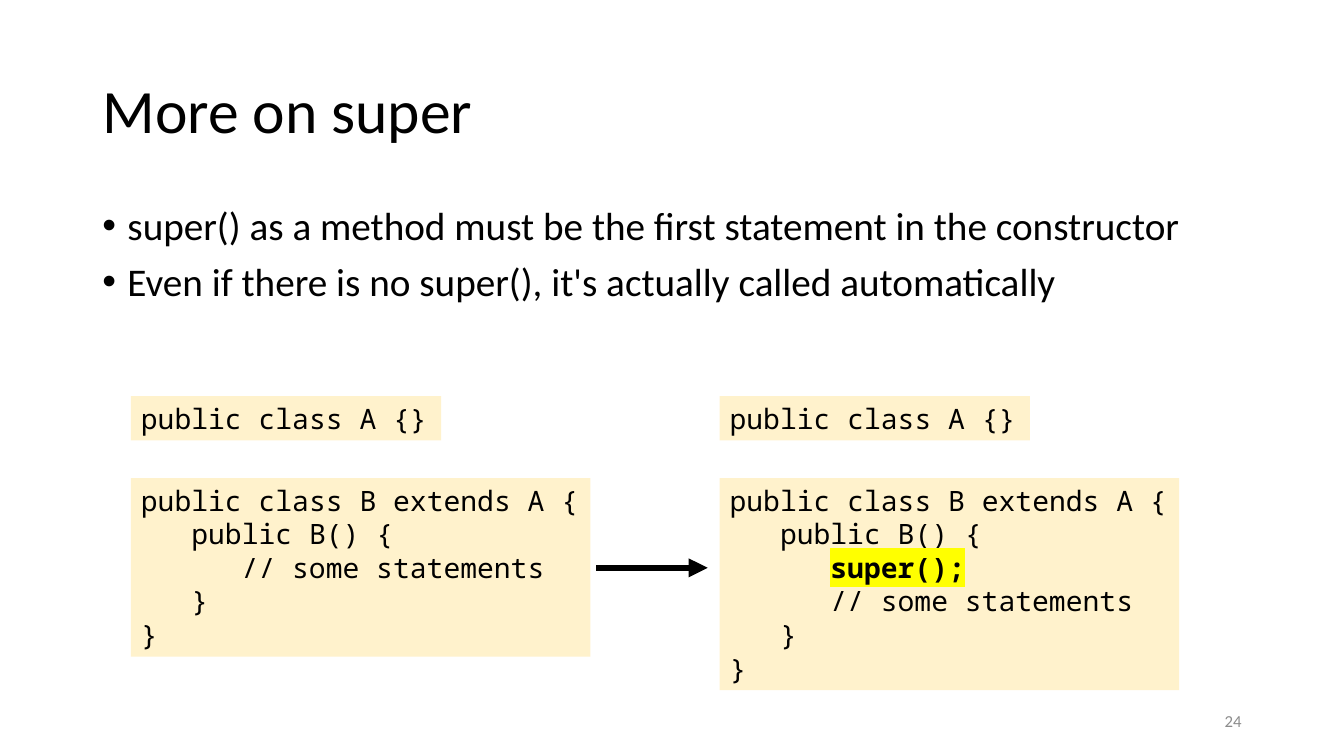
import pptx
import pptx.util
import pptx.oxml
import pptx.dml.color
import pptx.enum.shapes
import pptx.enum.text
import pptx.oxml.ns

Pt = pptx.util.Pt
ALIGN = pptx.enum.text.PP_ALIGN
ANCHOR = pptx.enum.text.MSO_ANCHOR

# Content: a code line is (indent level, text, highlighted)
TITLE = "More on super"
BULLETS = [
    "super() as a method must be the first statement in the constructor",
    "Even if there is no super(), it's actually called automatically",
]
PAGE = "24"
CLASS_A = [(0, "public class A {}", False)]
OPENING = [(0, "public class B extends A {", False), (1, "public B() {", False)]
CLOSING = [(2, "// some statements", False), (1, "}", False), (0, "}", False)]
CALL = [(2, "super();", True)]
COLUMNS = [
    (93.6, OPENING + CLOSING),
    (514.1, OPENING + CALL + CLOSING),
]
COLORS = {"text": "000000", "page": "8C8C8C", "code": "FFF2CC", "mark": "FFFF00"}
SANS, MONO = "Calibri", "Noto Sans Mono"
CODE_LINE, CODE_INDENT, CODE_PAD = 24, 36, 7.6


def rgb(name):
    return pptx.dml.color.RGBColor.from_string(COLORS[name])


def xml(tag, **attrs):
    el = pptx.oxml.parse_xml(f"<a:{tag} {pptx.oxml.ns.nsdecls('a')}/>")
    for key, value in attrs.items():
        el.set(key, str(value))
    return el


def write(p, text, size, font=SANS, color="text", align=ALIGN.LEFT,
          spacing=1.0, before=0, indent=0, bullet=False, mark=False):
    p.alignment, p.line_spacing, p.space_before = align, spacing, Pt(before)
    r = p.add_run()
    r.text = text
    r.font.size, r.font.name, r.font.bold = Pt(size), font, mark
    r.font.color.rgb = rgb(color)
    pPr = p._p.get_or_add_pPr()
    pPr.set("marL", str(Pt(indent)))
    if bullet:
        pPr.set("indent", str(-Pt(indent)))
        pPr.append(xml("buFont", typeface="Arial"))
        pPr.append(xml("buChar", char="•"))
    if mark:
        highlight = xml("highlight")
        highlight.append(xml("srgbClr", val=COLORS["mark"]))
        r._r.rPr.find(pptx.oxml.ns.qn("a:latin")).addprevious(highlight)


def paragraphs(tf, count):
    return [tf.paragraphs[0]] + [tf.add_paragraph() for _ in range(count - 1)]


def textbox(shapes, left, top, width, height, anchor=ANCHOR.TOP):
    s = shapes.add_textbox(Pt(left), Pt(top), Pt(width), Pt(height))
    s.text_frame.word_wrap = True
    s.text_frame.vertical_anchor = anchor
    return s


def code_box(shapes, left, top, width, lines):
    s = textbox(shapes, left, top, width, CODE_LINE * len(lines) + CODE_PAD)
    s.fill.solid()
    s.fill.fore_color.rgb = rgb("code")
    for p, (level, text, mark) in zip(paragraphs(s.text_frame, len(lines)), lines):
        write(p, text, 20, font=MONO, spacing=Pt(CODE_LINE),
              indent=level * CODE_INDENT, mark=mark)


prs = pptx.Presentation()
prs.slide_width, prs.slide_height = Pt(960), Pt(540)
slide = prs.slides.add_slide(prs.slide_layouts[5])

# Title
s = slide.shapes.title
s.left, s.top, s.width, s.height = Pt(66), Pt(28.75), Pt(828), Pt(104.4)
tf = s.text_frame
tf.auto_size = pptx.enum.text.MSO_AUTO_SIZE.NONE
tf.vertical_anchor = ANCHOR.MIDDLE
write(tf.paragraphs[0], TITLE, 44, spacing=0.9)

# Bullets
s = textbox(slide.shapes, 66, 143.75, 828, 342.6)
for p, text in zip(paragraphs(s.text_frame, len(BULLETS)), BULLETS):
    write(p, text, 28, spacing=0.9, before=10, indent=18, bullet=True)

# Page number
s = textbox(slide.shapes, 678, 500.5, 216, 28.75, anchor=ANCHOR.MIDDLE)
write(s.text_frame.paragraphs[0], PAGE, 12, color="page", align=ALIGN.RIGHT)

# Code before and after
for left, class_b in COLUMNS:
    group = slide.shapes.add_group_shape()
    code_box(group.shapes, left, 282.9, 221.6, CLASS_A)
    code_box(group.shapes, left, 341.5, 328.2, class_b)

# Arrow between the columns
arrow = slide.shapes.add_connector(
    pptx.enum.shapes.MSO_CONNECTOR.STRAIGHT, Pt(426), Pt(405.6), Pt(505.5), Pt(405.6))
arrow.line.color.rgb = rgb("text")
arrow.line.width = Pt(4.5)
arrow.line._get_or_add_ln().append(xml("tailEnd", type="triangle"))
arrow._element.spPr.append(xml("effectLst"))

prs.save("out.pptx")
